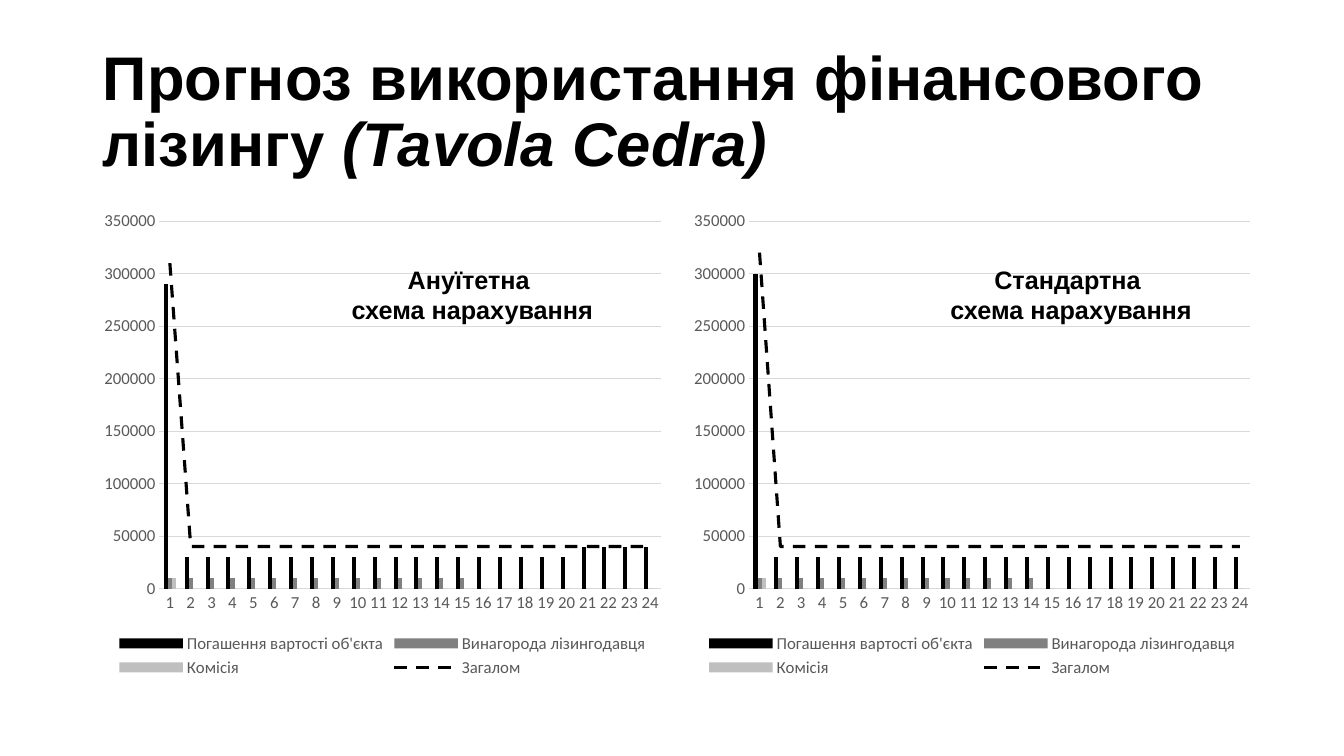
from lxml import etree
from pptx import Presentation
from pptx import util as u
from pptx.chart.data import CategoryChartData
from pptx.dml.color import RGBColor
from pptx.enum import chart as ch, dml, text
from pptx.oxml.ns import qn

MONTHS = 24
TITLE_BOX = (66.24, 28.8, 828, 104.4)
SCHEMES = [
    ("Ануїтетна ", 66.24, 172.08, {
        "Погашення вартості об'єкта": [290000] + [30000] * 19 + [40000] * 4,
        "Винагорода лізингодавця": [10000] * 15 + [0] * 9,
        "Комісія": [10000] + [0] * 23,
        "Загалом": [310000] + [40000] * 23,
    }),
    ("Стандартна ", 487.44, 178.56, {
        "Погашення вартості об'єкта": [300000] + [30000] * 23,
        "Винагорода лізингодавця": [10000] * 14 + [0] * 10,
        "Комісія": [10000] + [0] * 23,
        "Загалом": [320000] + [40000] * 23,
    }),
]
BAR_COLOURS = ("000000", "808080", "BFBFBF")


def rgb(value):
    """Return the colour for a hex string."""
    return RGBColor.from_string(value)


def style_font(font, name, size, colour, bold=False, italic=False):
    """Set the face, size and colour of a font."""
    font.name, font.size = name, u.Pt(size)
    font.bold, font.italic = bold, italic
    font.color.rgb = rgb(colour)


def style_line(line, colour, width):
    """Set the colour and width of a line."""
    line.color.rgb = rgb(colour)
    line.width = u.Pt(width)


def add_run(p, words, size, italic=False):
    """Add a bold black run to a paragraph."""
    r = p.add_run()
    r.text = words
    style_font(r.font, "Arial", size, "000000", True, italic)


def add_title(s, box):
    """Place and fill the slide title."""
    sp = s.shapes.title
    sp.left, sp.top, sp.width, sp.height = map(u.Pt, box)
    tf = sp.text_frame
    tf.word_wrap = True
    tf.auto_size = text.MSO_AUTO_SIZE.NONE
    tf.vertical_anchor = text.MSO_ANCHOR.MIDDLE
    p = tf.paragraphs[0]
    p.alignment = text.PP_ALIGN.LEFT
    p.line_spacing = 0.9
    add_run(p, "Прогноз використання фінансового лізингу ", 44)
    add_run(p, "(Tavola Cedra)", 44, True)


def move_last_series_to_line(chart):
    """Turn the last column series into a line on the same axes."""
    bar = chart.plots[0]._element
    ser = bar.findall(qn("c:ser"))[-1]
    line = etree.Element(qn("c:lineChart"))
    etree.SubElement(line, qn("c:grouping")).set("val", "standard")
    etree.SubElement(line, qn("c:varyColors")).set("val", "0")
    for invert in ser.findall(qn("c:invertIfNegative")):
        ser.remove(invert)
    line.append(ser)
    etree.SubElement(line, qn("c:marker")).set("val", "1")
    for axis in bar.findall(qn("c:axId")):
        etree.SubElement(line, qn("c:axId")).set("val", axis.get("val"))
    bar.addnext(line)


def add_chart(s, box, series):
    """Add the payment columns with the dashed total line."""
    data = CategoryChartData()
    data.categories = [str(month) for month in range(1, MONTHS + 1)]
    for name, values in series.items():
        data.add_series(name, values)
    chart = s.shapes.add_chart(ch.XL_CHART_TYPE.COLUMN_CLUSTERED,
                               *map(u.Pt, box), data).chart
    style_font(chart.font, "Calibri", 10, "000000")
    chart.has_title = False
    chart.has_legend = True
    chart.legend.position = ch.XL_LEGEND_POSITION.BOTTOM
    chart.legend.include_in_layout = False
    style_font(chart.legend.font, "Calibri", 12, "595959")

    for axis in (chart.category_axis, chart.value_axis):
        axis.major_tick_mark = axis.minor_tick_mark = ch.XL_TICK_MARK.NONE
        style_font(axis.tick_labels.font, "Calibri", 12, "595959")
    style_line(chart.category_axis.format.line, "D9D9D9", 0.75)
    values = chart.value_axis
    values.minimum_scale, values.maximum_scale = 0, 350000
    values.major_unit = 50000
    values.format.line.fill.background()
    values.has_major_gridlines = True
    style_line(values.major_gridlines.format.line, "D9D9D9", 0.75)

    move_last_series_to_line(chart)
    columns, lines = chart.plots
    columns.gap_width, columns.overlap = 219, 0
    columns.vary_by_categories = False
    for column, colour in zip(columns.series, BAR_COLOURS):
        column.format.fill.solid()
        column.format.fill.fore_color.rgb = rgb(colour)
    total = lines.series[0]
    total.smooth = False
    total.marker.style = ch.XL_MARKER_STYLE.NONE
    style_line(total.format.line, "000000", 2.25)
    total.format.line.dash_style = dml.MSO_LINE.DASH


def add_caption(s, box, scheme):
    """Name the payment scheme over its chart."""
    tf = s.shapes.add_textbox(*map(u.Pt, box)).text_frame
    tf.word_wrap = True
    tf.auto_size = text.MSO_AUTO_SIZE.SHAPE_TO_FIT_TEXT
    for i, words in enumerate((scheme, "схема нарахування")):
        p = tf.add_paragraph() if i else tf.paragraphs[0]
        p.alignment = text.PP_ALIGN.CENTER
        add_run(p, words, 18)


def main():
    """Build and save the leasing forecast slide."""
    prs = Presentation()
    prs.slide_width, prs.slide_height = u.Pt(960), u.Pt(540)
    s = prs.slides.add_slide(prs.slide_layouts[5])
    add_title(s, TITLE_BOX)
    top = 144
    for _, left, _, series in SCHEMES:
        add_chart(s, (left, top, 414, 342.72), series)
    for scheme, left, indent, _ in SCHEMES:
        add_caption(s, (left + indent, top + 41.04, 198, 51.12), scheme)
    prs.save("out.pptx")


if __name__ == "__main__":
    main()
